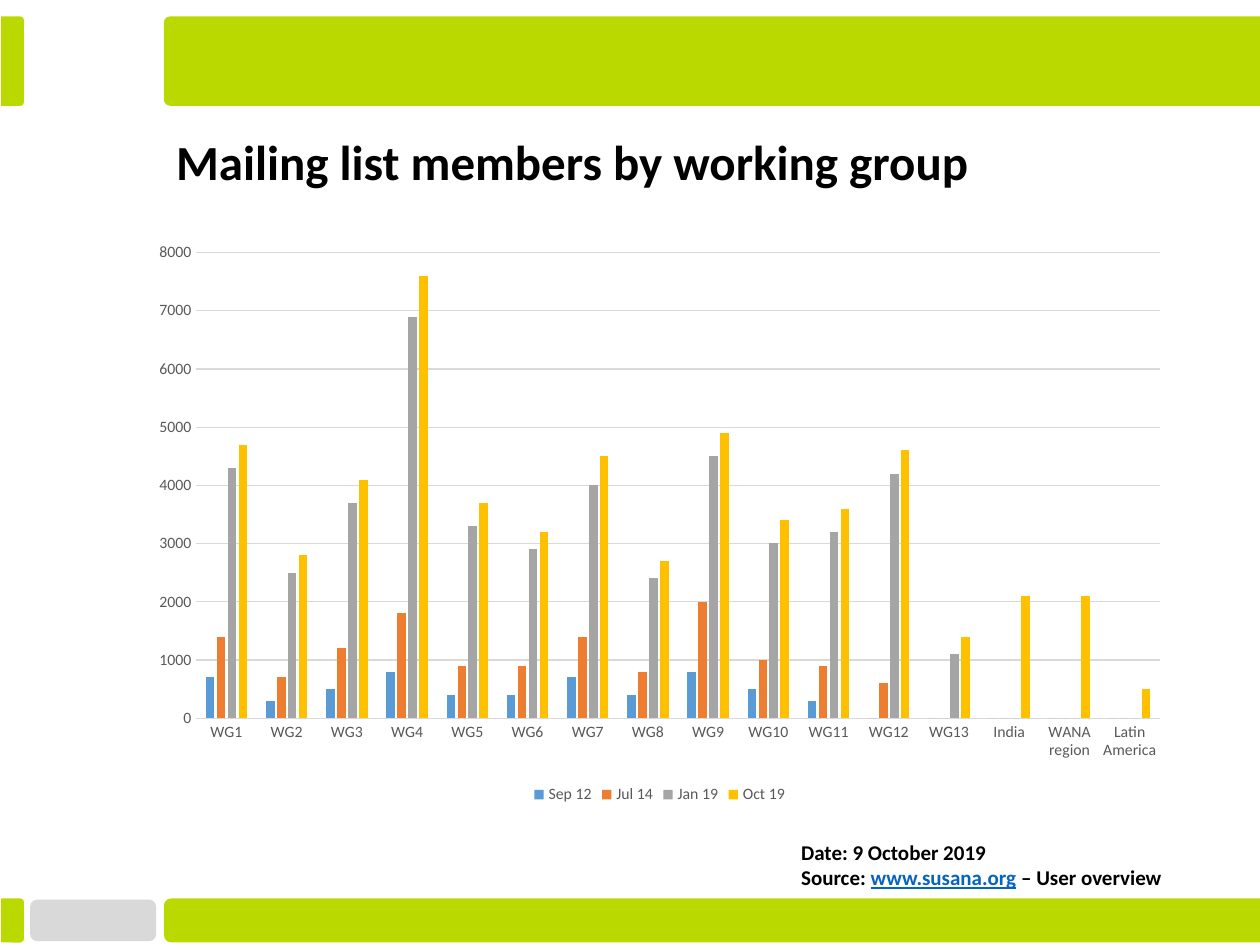
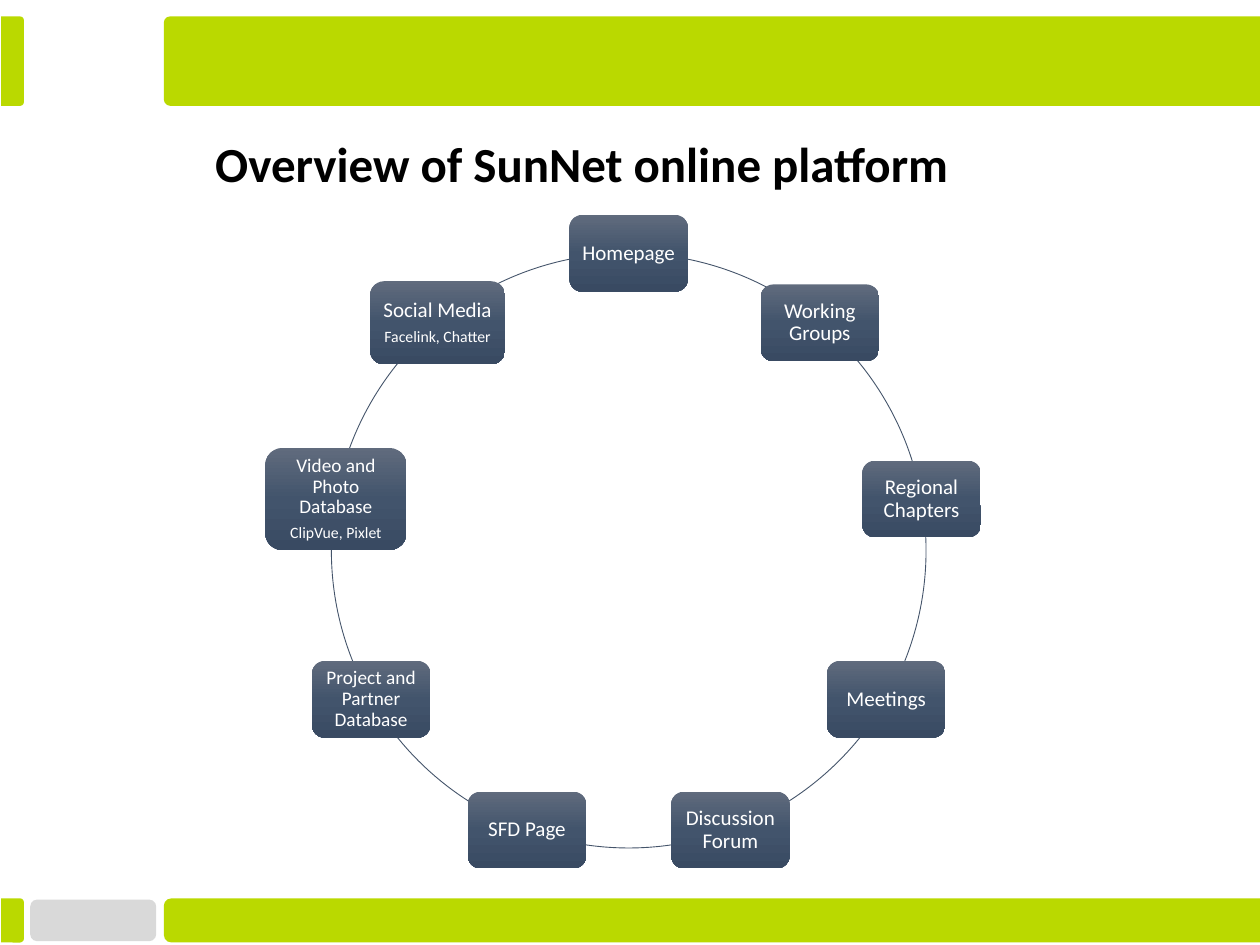
from copy import deepcopy
from math import cos, radians, sin
from typing import Any, NamedTuple

from pptx import Presentation
from pptx.chart.data import CategoryChartData
from pptx.dml.color import RGBColor
from pptx.enum.chart import XL_CHART_TYPE as CHART, XL_LEGEND_POSITION as LEGEND, XL_TICK_MARK as TICK
from pptx.enum.shapes import MSO_SHAPE as SHAPE
from pptx.enum.text import MSO_ANCHOR as ANCHOR, PP_ALIGN as ALIGN
from pptx.oxml.ns import qn
from pptx.util import Emu, Pt

EMU_PER_PX = 9144
FONT = "Calibri"
LIME, GREY, BLACK, WHITE = "BAD900", "D9D9D9", "000000", "FFFFFF"
LINK, AXIS_TEXT, RING = "0563C1", "595959", "44546A"
NODE_GRADIENT = [(0, "606B7D"), (0.5, "42546C"), (1, "394A62")]
RING_X, RING_Y, RING_R = 499, 437, 236


class Band(NamedTuple):
    left: int
    top: int
    width: int
    height: int
    turn: int
    corner: float = 0.17


class Run(NamedTuple):
    text: str
    color: str = BLACK
    underline: bool = False


class Node(NamedTuple):
    label: str
    note: str = ""
    size: int = 12
    width: int = 94
    height: int = 61


class Series(NamedTuple):
    name: str
    color: str
    values: list[int]


BANDS = [
    Band(130, 713, 870, 35, 90),
    Band(1, 13, 18, 71, 270),
    Band(130, 13, 870, 71, 90, 0.07),
    Band(1, 713, 18, 35, 270),
]

NODES = [
    Node("Homepage"),
    Node("Working Groups"),
    Node("Regional Chapters"),
    Node("Meetings"),
    Node("Discussion Forum"),
    Node("SFD Page"),
    Node("Project and Partner Database", size=11),
    Node("Video and Photo Database", "ClipVue, Pixlet", 11, 112, 81),
    Node("Social Media", "Facelink, Chatter", width=107, height=66),
]

CATEGORIES = [f"WG{n}" for n in range(1, 14)] + ["India", "WANA region", "Latin America"]
SERIES = [
    Series("Sep 12", "5B9BD5",
           [700, 300, 500, 800, 400, 400, 700, 400, 800, 500, 300, 0, 0, 0, 0, 0]),
    Series("Jul 14", "ED7D31",
           [1400, 700, 1200, 1800, 900, 900, 1400, 800, 2000, 1000, 900, 600, 0, 0, 0, 0]),
    Series("Jan 19", "A5A5A5",
           [4300, 2500, 3700, 6900, 3300, 2900, 4000, 2400, 4500, 3000, 3200, 4200, 1100, 0, 0, 0]),
    Series("Oct 19", "FFC000",
           [4700, 2800, 4100, 7600, 3700, 3200, 4500, 2700, 4900, 3400, 3600, 4600, 1400, 2100, 2100, 500]),
]
SOURCE_NOTE = [
    [Run("Date: 9 October 2019")],
    [Run("Source: "), Run("www.susana.org", LINK, True), Run(" – User overview")],
]


def px(*lengths: float) -> list[Emu]:
    return [Emu(round(length * EMU_PER_PX)) for length in lengths]


def rgb(color: str) -> RGBColor:
    return RGBColor.from_string(color)


def apply(target: Any, values: dict[str, Any]) -> None:
    for name, value in values.items():
        setattr(target, name, value)


def set_font(font: Any, size: int, color: str, **extra: Any) -> None:
    apply(font, {"name": FONT, "size": Pt(size), **extra})
    font.color.rgb = rgb(color)


def set_line(line: Any, color: str, width: float) -> None:
    line.color.rgb = rgb(color)
    line.width = Pt(width)


def add_shape(slide: Any, kind: Any, *box: float) -> Any:
    sp = slide.shapes.add_shape(kind, *px(*box))
    sp.shadow.inherit = False
    sp.line.fill.background()
    return sp


def fill_solid(sp: Any, color: str) -> None:
    sp.fill.solid()
    sp.fill.fore_color.rgb = rgb(color)


def fill_gradient(sp: Any) -> None:
    sp.fill.gradient()
    sp.fill.gradient_angle = 270
    stops = sp._element.spPr.find(".//" + qn("a:gsLst"))
    stops.append(deepcopy(stops[-1]))
    for stop, (position, color) in zip(sp.fill.gradient_stops, NODE_GRADIENT):
        stop.position = position
        stop.color.rgb = rgb(color)


def add_band(slide: Any, band: Band) -> None:
    left = band.left + (band.width - band.height) / 2
    top = band.top + (band.height - band.width) / 2
    sp = add_shape(slide, SHAPE.ROUND_2_SAME_RECTANGLE, left, top, band.height, band.width)
    sp.rotation = band.turn
    sp.adjustments[0], sp.adjustments[1] = 0, band.corner
    fill_solid(sp, LIME)


def add_text(slide: Any, box: tuple[int, ...], lines: list[list[Run]], size: int, **frame: Any) -> None:
    tf = slide.shapes.add_textbox(*px(*box)).text_frame
    apply(tf, {"word_wrap": True, "vertical_anchor": ANCHOR.MIDDLE, **frame})
    for i, runs in enumerate(lines):
        p = tf.paragraphs[0] if i == 0 else tf.add_paragraph()
        for run in runs:
            r = p.add_run()
            r.text = run.text
            set_font(r.font, size, run.color, bold=True, underline=run.underline)


def add_slide(prs: Any, title: str, left: int, top: int) -> Any:
    slide = prs.slides.add_slide(prs.slide_layouts[6])
    fill_solid(add_shape(slide, SHAPE.ROUNDED_RECTANGLE, 24, 714, 100, 33), GREY)
    for band in BANDS:
        add_band(slide, band)
    add_text(slide, (left, top, 835, 63), [[Run(title)]], 28)
    return slide


def add_members_chart(slide: Any) -> None:
    data = CategoryChartData()
    data.categories = CATEGORIES
    for series in SERIES:
        data.add_series(series.name, series.values)
    frame = slide.shapes.add_chart(CHART.COLUMN_CLUSTERED, *px(110, 184, 827, 458), data)
    chart = frame.chart
    apply(chart, {"has_title": False, "has_legend": True})
    set_font(chart.font, 10, BLACK)
    apply(chart.legend, {"position": LEGEND.BOTTOM, "include_in_layout": False})

    plot = chart.plots[0]
    apply(plot, {"gap_width": 219, "overlap": -27, "vary_by_categories": False})
    for column, series in zip(plot.series, SERIES):
        fill_solid(column.format, series.color)

    cat_axis, val_axis = chart.category_axis, chart.value_axis
    for axis in (cat_axis, val_axis):
        apply(axis, {"major_tick_mark": TICK.NONE, "minor_tick_mark": TICK.NONE})
    for font in (cat_axis.tick_labels.font, val_axis.tick_labels.font, chart.legend.font):
        set_font(font, 9, AXIS_TEXT)
    apply(val_axis, {"minimum_scale": 0, "maximum_scale": 8000, "major_unit": 1000,
                     "has_major_gridlines": True})
    set_line(cat_axis.format.line, GREY, 0.75)
    set_line(val_axis.major_gridlines.format.line, GREY, 0.75)
    val_axis.format.line.fill.background()


def add_arc(slide: Any, start: float, end: float) -> None:
    sp = add_shape(slide, SHAPE.ARC, RING_X - RING_R, RING_Y - RING_R, 2 * RING_R, 2 * RING_R)
    for i, angle in enumerate((start, end)):
        sp.adjustments[i] = angle % 360 * 0.6
    sp.fill.background()
    set_line(sp.line, RING, 0.5)


def add_node(slide: Any, node: Node, angle: float) -> None:
    x = RING_X + RING_R * cos(radians(angle))
    y = RING_Y + RING_R * sin(radians(angle))
    sp = add_shape(slide, SHAPE.ROUNDED_RECTANGLE,
                   x - node.width / 2, y - node.height / 2, node.width, node.height)
    fill_gradient(sp)
    tf = sp.text_frame
    inset = px(5)[0]
    apply(tf, {"word_wrap": True, "vertical_anchor": ANCHOR.MIDDLE, "margin_left": inset,
               "margin_right": inset, "margin_top": inset, "margin_bottom": inset})
    p = tf.paragraphs[0]
    lines = [(p, node.label, node.size)]
    if node.note:
        p.space_after = Pt(4)
        lines.append((tf.add_paragraph(), node.note, 9))
    for p, text, size in lines:
        apply(p, {"alignment": ALIGN.CENTER, "line_spacing": 0.9})
        r = p.add_run()
        r.text = text
        set_font(r.font, size, WHITE)


def build_members(prs: Any) -> None:
    slide = add_slide(prs, "Mailing list members by working group", 130, 96)
    add_text(slide, (626, 666, 311, 40), SOURCE_NOTE, 12,
             word_wrap=False, margin_top=0, margin_bottom=0)
    add_members_chart(slide)


def build_platform(prs: Any) -> None:
    slide = add_slide(prs, "Overview of SunNet online platform", 161, 98)
    step = 360 / len(NODES)
    angles = [i * step - 90 for i in range(len(NODES))]
    for angle in angles:
        add_arc(slide, angle, angle + step)
    for node, angle in zip(NODES, angles):
        add_node(slide, node, angle)


def main() -> None:
    prs = Presentation()
    prs.slide_width, prs.slide_height = px(1000, 750)
    build_members(prs)
    build_platform(prs)
    prs.save("out.pptx")


if __name__ == "__main__":
    main()
